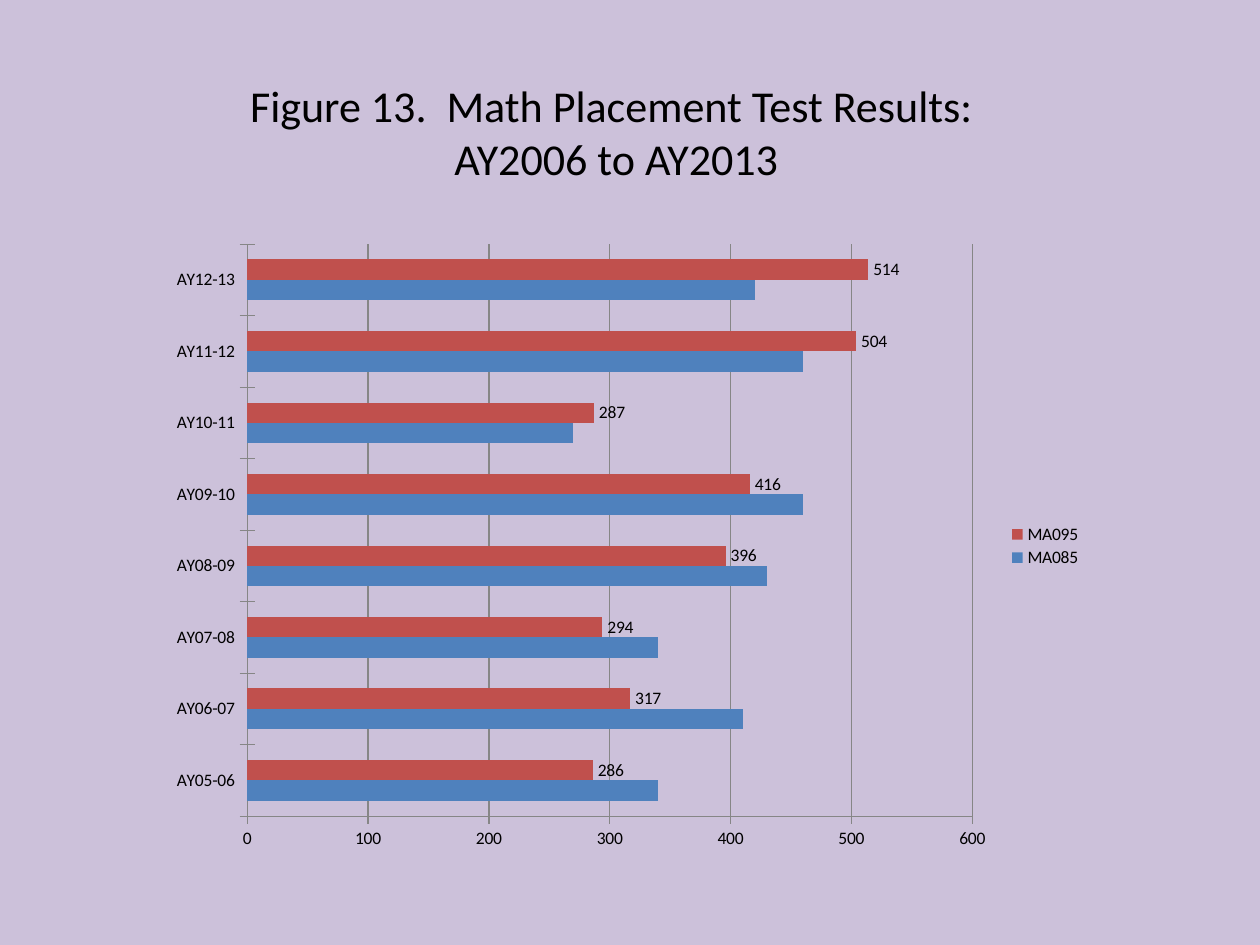
from pptx import Presentation
from pptx.chart.data import CategoryChartData
from pptx.dml.color import RGBColor
from pptx.enum.chart import XL_CHART_TYPE, XL_LABEL_POSITION, XL_LEGEND_POSITION, XL_TICK_MARK
from pptx.enum.text import MSO_ANCHOR, MSO_AUTO_SIZE, PP_ALIGN
from pptx.oxml import parse_xml
from pptx.oxml.ns import nsdecls
from pptx.util import Pt

BAR = XL_CHART_TYPE.BAR_CLUSTERED
OUTSIDE_END = XL_LABEL_POSITION.OUTSIDE_END
RIGHT = XL_LEGEND_POSITION.RIGHT
CROSS, NO_TICK = XL_TICK_MARK.CROSS, XL_TICK_MARK.NONE
MIDDLE, CENTER, NO_FIT = MSO_ANCHOR.MIDDLE, PP_ALIGN.CENTER, MSO_AUTO_SIZE.NONE

TITLE = "Figure 13.  Math Placement Test Results: \vAY2006 to AY2013"
YEARS = ["AY05-06", "AY06-07", "AY07-08", "AY08-09",
         "AY09-10", "AY10-11", "AY11-12", "AY12-13"]
COURSES = [
    {"name": "MA085", "color": "4F81BD", "labels": False,
     "counts": [340, 410, 340, 430, 460, 270, 460, 420]},
    {"name": "MA095", "color": "C0504D", "labels": True,
     "counts": [286, 317, 294, 396, 416, 287, 504, 514]},
]
THEME = {"font": "Calibri", "text": "000000", "background": "CCC1DA",
         "line": "868686", "title_size": 25.2, "chart_size": 10}

# left, top, width, height in points
TITLE_BOX = (96, 30, 512.5, 90)
CHART_BOX = (90, 132, 534, 360)
# x, y, width, height as shares of the chart
PLOT_SHARE = (0.1, 0.02, 0.78, 0.91)
PLOT_SHARE = (0.096, 0.021, 0.776, 0.908)
LEGEND_SHARE = (0.91, 0.46, 0.08, 0.08)


def rgb(name):
    return RGBColor.from_string(THEME.get(name, name))


def style_font(font, size):
    font.name = THEME["font"]
    font.size = Pt(THEME[size])
    font.color.rgb = rgb("text")


def style_line(line):
    line.color.rgb = rgb("line")
    line.width = Pt(0.75)


def manual_layout(share, inner=False):
    target = '<c:layoutTarget val="inner"/>' if inner else ""
    modes = '<c:xMode val="edge"/><c:yMode val="edge"/>'
    sizes = "".join(f'<c:{k} val="{v}"/>' for k, v in zip("xywh", share))
    return parse_xml(f'<c:layout {nsdecls("c")}><c:manualLayout>{target}{modes}{sizes}'
                     '</c:manualLayout></c:layout>')


def add_title(slide):
    sp = slide.shapes.title
    sp.left, sp.top, sp.width, sp.height = map(Pt, TITLE_BOX)
    tf = sp.text_frame
    tf.text = TITLE
    tf.word_wrap = True
    tf.auto_size = NO_FIT
    tf.vertical_anchor = MIDDLE
    p = tf.paragraphs[0]
    p.alignment = CENTER
    style_font(p.font, "title_size")


def add_results_chart(slide):
    data = CategoryChartData()
    data.categories = YEARS
    for course in COURSES:
        data.add_series(course["name"], course["counts"])
    chart = slide.shapes.add_chart(BAR, *map(Pt, CHART_BOX), data).chart
    chart.has_title = False
    style_font(chart.font, "chart_size")

    for axis in (chart.category_axis, chart.value_axis):
        axis.major_tick_mark = CROSS
        axis.minor_tick_mark = NO_TICK
        style_line(axis.format.line)
    axis = chart.value_axis
    axis.minimum_scale, axis.maximum_scale, axis.major_unit = 0, 600, 100
    axis.has_major_gridlines = True
    style_line(axis.major_gridlines.format.line)

    plot = chart.plots[0]
    plot.vary_by_categories = False
    plot.gap_width = 150
    plot.overlap = 0
    for series, course in zip(plot.series, COURSES):
        series.format.fill.solid()
        series.format.fill.fore_color.rgb = rgb(course["color"])
        if course["labels"]:
            labels = series.data_labels
            labels.show_value = True
            labels.position = OUTSIDE_END
            style_font(labels.font, "chart_size")

    chart.has_legend = True
    legend = chart.legend
    legend.position = RIGHT
    legend.include_in_layout = False
    style_font(legend.font, "chart_size")

    area = chart.element.find(".//{*}plotArea")
    for old in area.findall("{*}layout"):
        area.remove(old)
    area.insert(0, manual_layout(PLOT_SHARE, inner=True))
    box = chart.element.find(".//{*}legend")
    for old in box.findall("{*}layout"):
        box.remove(old)
    box.find("{*}legendPos").addnext(manual_layout(LEGEND_SHARE))


def main():
    prs = Presentation()
    prs.slide_width, prs.slide_height = Pt(720), Pt(540)
    slide = prs.slides.add_slide(prs.slide_layouts[5])
    fill = slide.background.fill
    fill.solid()
    fill.fore_color.rgb = rgb("background")
    add_title(slide)
    add_results_chart(slide)
    prs.save("out.pptx")


if __name__ == "__main__":
    main()
